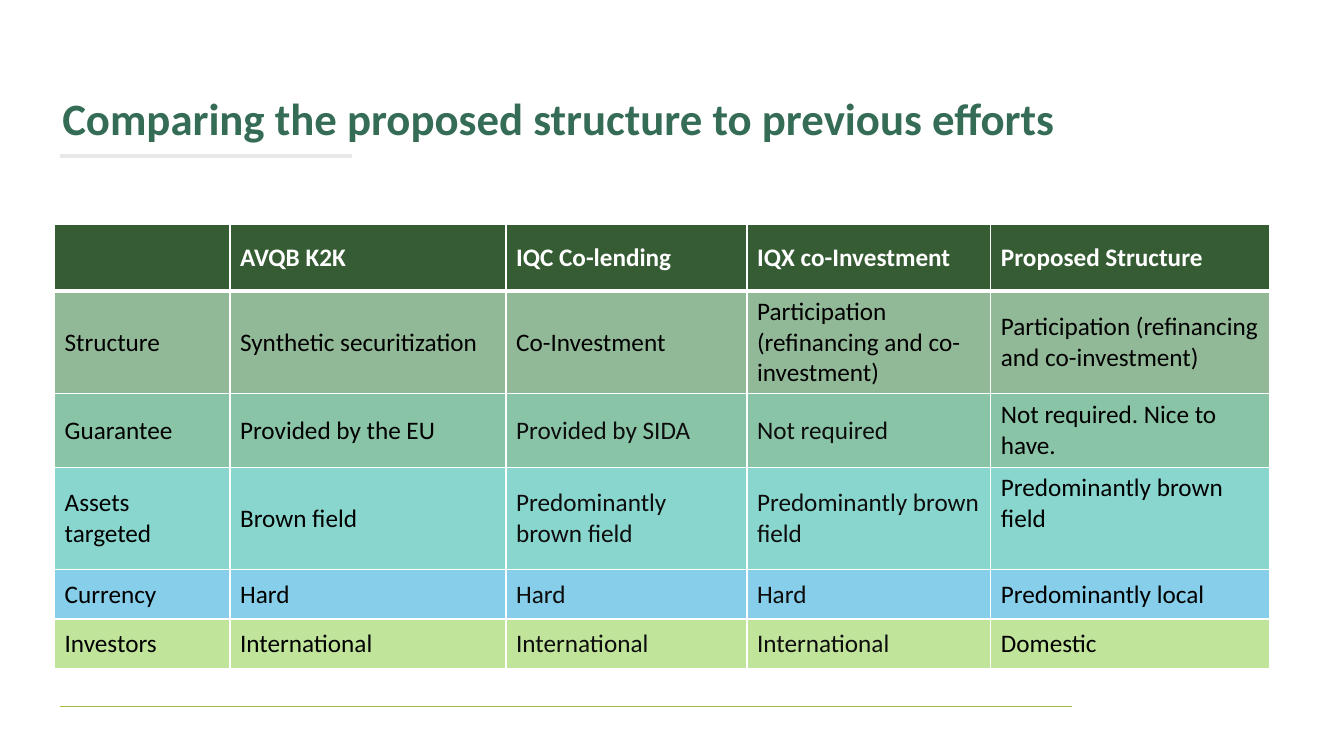
from lxml.etree import SubElement
from pptx import Presentation
from pptx.dml.color import RGBColor
from pptx.enum.text import MSO_ANCHOR, PP_ALIGN
from pptx.oxml.ns import qn
from pptx.util import Pt


def paint(fill, shade, alpha=100):
    fill.solid()
    fill.fore_color.rgb = RGBColor.from_string(shade)
    if alpha < 100:
        node = fill._xPr.find(qn("a:solidFill"))[0]
        SubElement(node, qn("a:alpha"), val=str(alpha * 1000))


def style(para, size, shade, bold=False):
    para.font.name = "Calibri"
    para.font.size = Pt(size)
    para.font.bold = bold
    para.font.color.rgb = RGBColor.from_string(shade)


deck = Presentation()
deck.slide_width, deck.slide_height = Pt(960), Pt(540)
slide = deck.slides.add_slide(deck.slide_layouts[6])

rules = [(765.4, 43.2, 504.7, "A0BE44", 0.6), (43.2, 251.3, 111.6, "E8E8E8", 3)]
for start, end, y, shade, width in rules:
    rule = slide.shapes.add_connector(1, Pt(start), Pt(y), Pt(end), Pt(y))
    paint(rule.line.fill, shade)
    rule.line.width = Pt(width)
    SubElement(rule._element.spPr, qn("a:effectLst"))

rows = [
    (47.5, "365C33", 100, ["", "AVQB K2K", "IQC Co-lending", "IQX co-Investment", "Proposed Structure"]),
    (73, "196B24", 47, ["Structure", "Synthetic securitization", "Co-Investment",
                        "Participation (refinancing and co-investment)",
                        "Participation (refinancing and co-investment)"]),
    (52.8, "188C54", 51, ["Guarantee", "Provided by the EU", "Provided by SIDA",
                          "Not required", "Not required. Nice to have."]),
    (73, "15AF9F", 50, ["Assets targeted", "Brown field"] + ["Predominantly brown field"] * 3),
    (35.2, "0F9ED5", 50, ["Currency", "Hard", "Hard", "Hard", "Predominantly local"]),
    (35.2, "92D050", 57, ["Investors"] + ["International"] * 3 + ["Domestic"]),
]
widths = [125.3, 197.2, 172.1, 174.2, 198.8]

frame = slide.shapes.add_table(len(rows), len(widths), Pt(39), Pt(160.6),
                               Pt(sum(widths)), Pt(sum(row[0] for row in rows)))
table = frame.table
for col, width in zip(table.columns, widths):
    col.width = Pt(width)

for r, (height, shade, alpha, words) in enumerate(rows):
    table.rows[r].height = Pt(height)
    for c, text in enumerate(words):
        cell = table.cell(r, c)
        cell.text = text
        cell.vertical_anchor = MSO_ANCHOR.MIDDLE
        para = cell.text_frame.paragraphs[0]
        if r == 0:
            para.alignment = PP_ALIGN.JUSTIFY
            style(para, 18, "FFFFFF", True)
        else:
            style(para, 18, "0D0D0D" if r > 1 and c in (2, 3) else "000000")
        props = cell._tc.get_or_add_tcPr()
        for side in "LRTB":
            thick = (r, side) in ((0, "B"), (1, "T"))
            edge = SubElement(props, qn(f"a:ln{side}"), w=str(Pt(3 if thick else 1)))
            SubElement(SubElement(edge, qn("a:solidFill")), qn("a:srgbClr"), val="FFFFFF")
        paint(cell.fill, shade, alpha)
table.cell(3, 4).vertical_anchor = MSO_ANCHOR.TOP

title = slide.shapes.add_textbox(Pt(37.4), Pt(61.2), Pt(766), Pt(46))
title.text_frame.word_wrap = True
title.text_frame.text = "Comparing the proposed structure to previous efforts"
style(title.text_frame.paragraphs[0], 32, "356C55", True)

deck.save("out.pptx")
